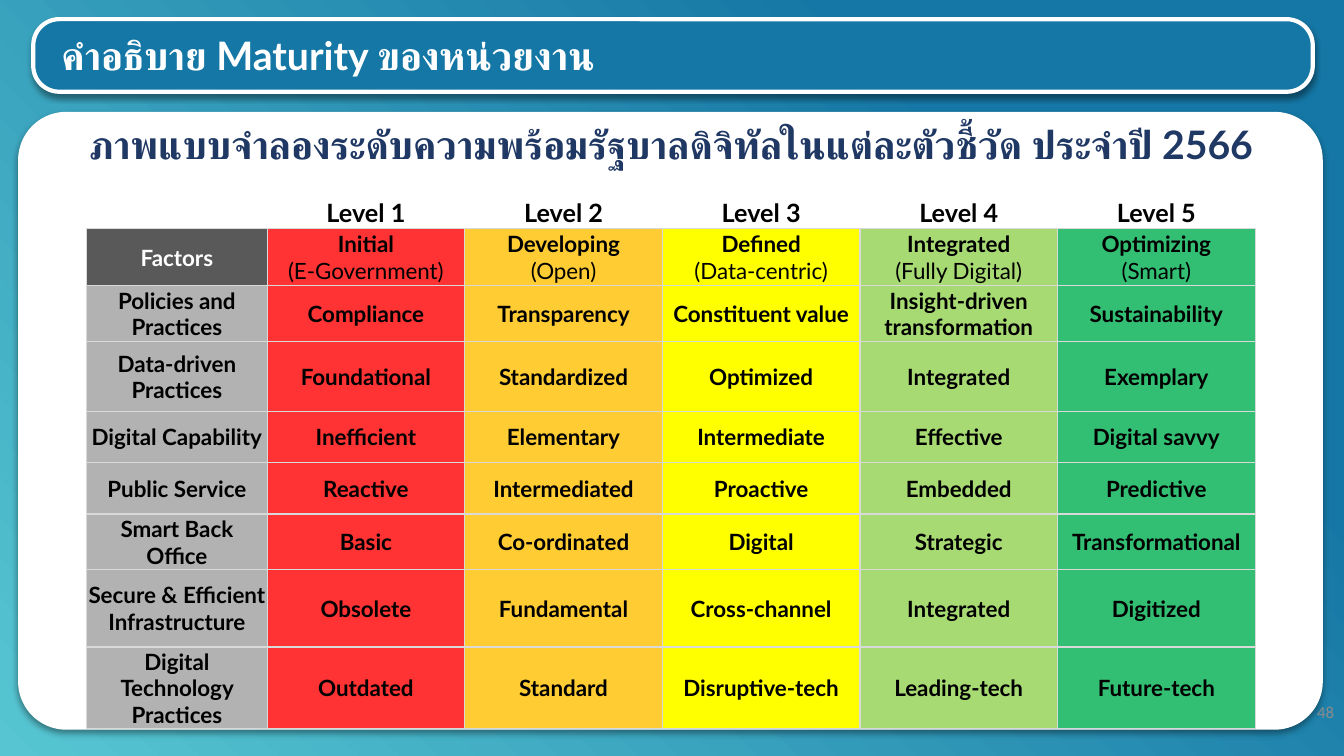
from lxml.etree import SubElement
from pptx import Presentation
from pptx.dml.color import RGBColor
from pptx.enum.shapes import MSO_SHAPE
from pptx.enum.text import MSO_ANCHOR, PP_ALIGN
from pptx.oxml import parse_xml
from pptx.oxml.ns import nsdecls, qn
from pptx.util import Inches, Pt

COLORS = {
    "sky": "57C6D2", "ocean": "1577A5", "white": "FFFFFF", "black": "000000",
    "navy": "203864", "number": "8C8C8C", "border": "D9D9D9",
    "header": "595959", "factor": "B2B2B2",
}
LEVELS = [("FF0000", 80), ("FFC000", 80), ("FFFF00", 100), ("91D14F", 80), ("00B050", 80)]
MATURITY = [
    ["Factors", "Initial\n(E-Government)", "Developing\n(Open)", "Defined\n(Data-centric)",
     "Integrated\n(Fully Digital)", "Optimizing\n(Smart)"],
    ["Policies and Practices", "Compliance", "Transparency", "Constituent value",
     "Insight-driven transformation", "Sustainability"],
    ["Data-driven Practices", "Foundational", "Standardized", "Optimized", "Integrated", "Exemplary"],
    ["Digital Capability", "Inefficient", "Elementary", "Intermediate", "Effective", "Digital savvy"],
    ["Public Service", "Reactive", "Intermediated", "Proactive", "Embedded", "Predictive"],
    ["Smart Back Office", "Basic", "Co-ordinated", "Digital", "Strategic", "Transformational"],
    ["Secure & Efficient Infrastructure", "Obsolete", "Fundamental", "Cross-channel",
     "Integrated", "Digitized"],
    ["Digital Technology Practices", "Outdated", "Standard", "Disruptive-tech",
     "Leading-tech", "Future-tech"],
]
TITLE = "ภาพแบบจำลองระดับความพร้อมรัฐบาลดิจิทัลในแต่ละตัวชี้วัด ประจำปี 2566"
ROWS = [
    [TITLE] + [""] * 5,
    [""] * 6,
    [""] + [f"Level {level}" for level in range(1, 6)],
] + MATURITY
ROW_HEIGHTS = [0.49, 0.28, 0.32, 0.56, 0.56, 0.69, 0.51, 0.51, 0.55, 0.77, 0.77]
COLUMN_WIDTHS = [1.79] + [1.96] * 5


def write(frame, text, size=16, color="black", font="Lato", bold=True, align=PP_ALIGN.CENTER):
    para = frame.paragraphs[0]
    para.alignment = align
    if not text:
        SubElement(para._p, qn("a:endParaRPr"), sz="800")
    for index, line in enumerate(text.splitlines()):
        if index:
            para.add_line_break()
        span = para.add_run()
        span.text = line
        span.font.size = Pt(size)
        span.font.bold = bold and index == 0
        span.font.color.rgb = RGBColor.from_string(COLORS[color])
        span.font.name = font
        SubElement(span.font._element, qn("a:cs"), typeface=font)


deck = Presentation()
deck.slide_width, deck.slide_height = Inches(13.33), Inches(7.5)
page = deck.slides.add_slide(deck.slide_layouts[6])

backdrop = page.background.fill
backdrop.gradient()
backdrop.gradient_angle = 45
for stop, (color, position) in zip(backdrop.gradient_stops, [("sky", 0), ("ocean", 0.76)]):
    stop.color.rgb = RGBColor.from_string(COLORS[color])
    stop.position = position

for bounds, corner, color, outlined in [
    ((0.33, 0.19, 12.69, 0.72), 0.358, "ocean", True),
    ((0.18, 1.11, 12.94, 6.13), 0.078, "white", False),
]:
    panel = page.shapes.add_shape(MSO_SHAPE.ROUNDED_RECTANGLE, *map(Inches, bounds))
    panel.adjustments[0] = corner
    panel.fill.solid()
    panel.fill.fore_color.rgb = RGBColor.from_string(COLORS[color])
    if outlined:
        panel.line.color.rgb = RGBColor.from_string(COLORS["white"])
        panel.line.width = Pt(3)
    else:
        panel.line.fill.background()
    panel._element.spPr.append(parse_xml(
        f'<a:effectLst {nsdecls("a")}><a:outerShdw blurRad="{Pt(4)}" dist="{Pt(3)}" dir="5400000" '
        'algn="t" rotWithShape="0"><a:srgbClr val="000000"><a:alpha val="40000"/></a:srgbClr>'
        '</a:outerShdw></a:effectLst>'))

for bounds, text, style in [
    ((10.33, 6.91, 3, 0.4), "48",
     dict(size=12, color="number", font="Calibri", bold=False, align=PP_ALIGN.RIGHT)),
    ((0.51, 0.26, 11.73, 0.57), "คำอธิบาย Maturity ของหน่วยงาน",
     dict(size=28, color="white", align=PP_ALIGN.LEFT)),
]:
    box = page.shapes.add_textbox(*map(Inches, bounds))
    box.text_frame.word_wrap = True
    write(box.text_frame, text, **style)

table = page.shapes.add_table(
    len(ROWS), len(COLUMN_WIDTHS), Inches(0.86), Inches(1.18),
    Inches(sum(COLUMN_WIDTHS)), Inches(sum(ROW_HEIGHTS))).table
table.first_row = table.horz_banding = False
table._tbl.tblPr.find(qn("a:tableStyleId")).text = "{2D5ABB26-0587-4C30-8999-92F81FD0307C}"
for column, width in zip(table.columns, COLUMN_WIDTHS):
    column.width = Inches(width)
for row, height in zip(table.rows, ROW_HEIGHTS):
    row.height = Inches(height)
for row in range(2):
    table.cell(row, 0).merge(table.cell(row, 5))

for row, texts in enumerate(ROWS):
    for column, text in enumerate(texts):
        cell = table.cell(row, column)
        cell.margin_left = cell.margin_right = cell.margin_top = Inches(0.01)
        cell.margin_bottom = 0
        cell.vertical_anchor = MSO_ANCHOR.BOTTOM if row == 0 else MSO_ANCHOR.MIDDLE
        size = {0: 28, 2: 18}.get(row, 16)
        color = "navy" if row == 0 else "white" if text == "Factors" else "black"
        write(cell.text_frame, text, size=size, color=color)

        sides = "" if row < 2 else "B" if row == 2 else "LRTB"
        properties = cell._tc.get_or_add_tcPr()
        for side in sides:
            properties.append(parse_xml(
                f'<a:ln{side} {nsdecls("a")} w="{Pt(1)}"><a:solidFill>'
                f'<a:srgbClr val="{COLORS["border"]}"/></a:solidFill></a:ln{side}>'))
        if row < 3:
            cell.fill.background()
            continue
        fill, opacity = LEVELS[column - 1] if column else (COLORS["header" if row == 3 else "factor"], 100)
        cell.fill.solid()
        cell.fill.fore_color.rgb = RGBColor.from_string(fill)
        if opacity < 100:
            tint = properties.find(qn("a:solidFill")).find(qn("a:srgbClr"))
            SubElement(tint, qn("a:alpha"), val=str(opacity * 1000))

deck.save("out.pptx")
